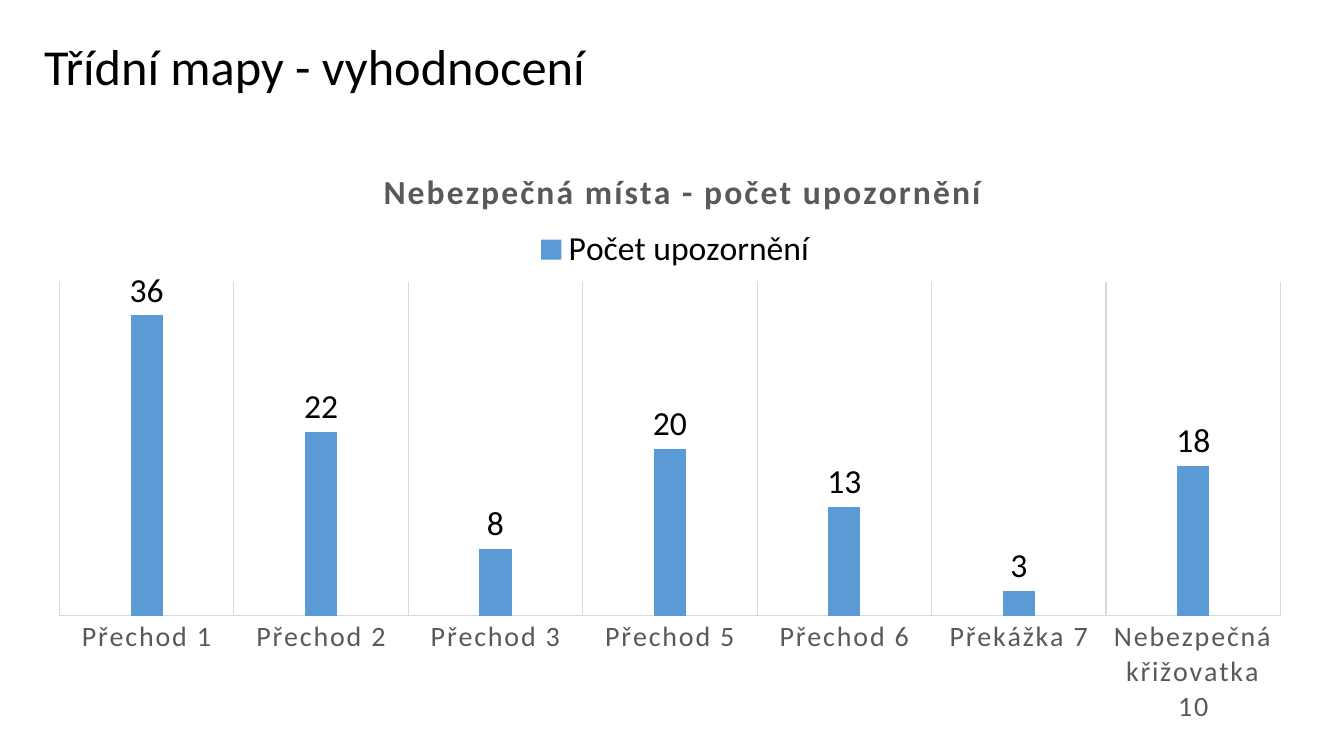
import pptx
import pptx.util
import pptx.chart.data
import pptx.dml.color
import pptx.enum.chart
import pptx.enum.text
import pptx.oxml
import pptx.oxml.ns

RGBColor = pptx.dml.color.RGBColor
BLACK = RGBColor(0x00, 0x00, 0x00)
GREY = RGBColor(0x59, 0x59, 0x59)
LIGHT = RGBColor(0xD9, 0xD9, 0xD9)
BLUE = RGBColor(0x5B, 0x9B, 0xD5)
FONT = "Calibri"

COUNTS = {
    "Přechod 1": 36,
    "Přechod 2": 22,
    "Přechod 3": 8,
    "Přechod 5": 20,
    "Přechod 6": 13,
    "Překážka 7": 3,
    "Nebezpečná křižovatka 10": 18,
}


def px(n):
    return pptx.util.Emu(round(n * 914400 / 100.8))


def set_font(font, size, color, bold=False):
    values = {"name": FONT, "size": pptx.util.Pt(size), "bold": bold}
    for key, value in values.items():
        setattr(font, key, value)
    font.color.rgb = color


def set_line(line):
    line.color.rgb = LIGHT
    line.width = pptx.util.Pt(0.75)


def set_layout(element, after, inner=False, **fractions):
    """Place a chart part by fractions of the chart's size."""
    for old in element.findall(pptx.oxml.ns.qn("c:layout")):
        element.remove(old)
    tags = '<c:layoutTarget val="inner"/>' if inner else ""
    tags += '<c:xMode val="edge"/><c:yMode val="edge"/>'
    tags += "".join(f'<c:{k} val="{v}"/>' for k, v in fractions.items())
    layout = pptx.oxml.parse_xml(
        f'<c:layout {pptx.oxml.ns.nsdecls("c")}>'
        f"<c:manualLayout>{tags}</c:manualLayout></c:layout>")
    if after:
        element.find(pptx.oxml.ns.qn(after)).addnext(layout)
    else:
        element.insert(0, layout)


def add_title(s, x, y, w, h):
    sp = s.shapes.title
    sp.left, sp.top, sp.width, sp.height = px(x), px(y), px(w), px(h)
    tf = sp.text_frame
    tf.word_wrap = True
    tf.vertical_anchor = pptx.enum.text.MSO_ANCHOR.MIDDLE
    p = tf.paragraphs[0]
    p.alignment = pptx.enum.text.PP_ALIGN.LEFT
    p.line_spacing = 0.9
    r = p.add_run()
    r.text = "Třídní mapy - vyhodnocení"
    set_font(r.font, 36, BLACK)


def add_counts_chart(s, x, y, w, h):
    data = pptx.chart.data.CategoryChartData()
    data.categories = list(COUNTS)
    data.add_series("Počet upozornění", list(COUNTS.values()))
    chart = s.shapes.add_chart(
        pptx.enum.chart.XL_CHART_TYPE.COLUMN_CLUSTERED,
        px(x), px(y), px(w), px(h), data).chart
    set_font(chart.font, 10, BLACK)

    # Chart title
    chart.has_title = True
    title = chart.chart_title
    r = title.text_frame.paragraphs[0].add_run()
    r.text = "Nebezpečná místa - počet upozornění"
    set_font(r.font, 24, GREY, bold=True)
    r.font._element.set("spc", "150")
    set_layout(title._element, "c:tx", x=0.27, y=0.04)

    # Legend
    chart.has_legend = True
    legend = chart.legend
    legend.position = pptx.enum.chart.XL_LEGEND_POSITION.TOP
    legend.include_in_layout = False
    set_font(legend.font, 24, BLACK)
    set_layout(legend._element, "c:legendPos", x=0.39, y=0.14)

    # Axes
    axis = chart.category_axis
    axis.major_tick_mark = pptx.enum.chart.XL_TICK_MARK.NONE
    axis.has_major_gridlines = True
    set_line(axis.format.line)
    set_line(axis.major_gridlines.format.line)
    font = axis.tick_labels.font
    set_font(font, 20, GREY)
    font._element.set("spc", "120")
    scale = {"visible": False, "has_major_gridlines": False,
             "minimum_scale": 0, "maximum_scale": 40}
    for key, value in scale.items():
        setattr(chart.value_axis, key, value)

    # Columns and their values
    plot = chart.plots[0]
    plot.vary_by_categories = False
    plot.gap_width = 444
    plot.overlap = -90
    fill = plot.series[0].format.fill
    fill.solid()
    fill.fore_color.rgb = BLUE
    labels = plot.series[0].data_labels
    labels.show_value = True
    labels.position = pptx.enum.chart.XL_LABEL_POSITION.OUTSIDE_END
    set_font(labels.font, 24, BLACK)
    plot_area = chart._chartSpace.chart.plotArea
    set_layout(plot_area, None, inner=True, x=0.02, y=0.24, w=0.96, h=0.56)


def main():
    prs = pptx.Presentation()
    prs.slide_width, prs.slide_height = px(1344), px(756)
    s = prs.slides.add_slide(prs.slide_layouts[5])
    add_title(s, 34, 0, 1310, 139)
    add_counts_chart(s, 34, 139, 1272, 596)
    prs.save("out.pptx")


if __name__ == "__main__":
    main()
